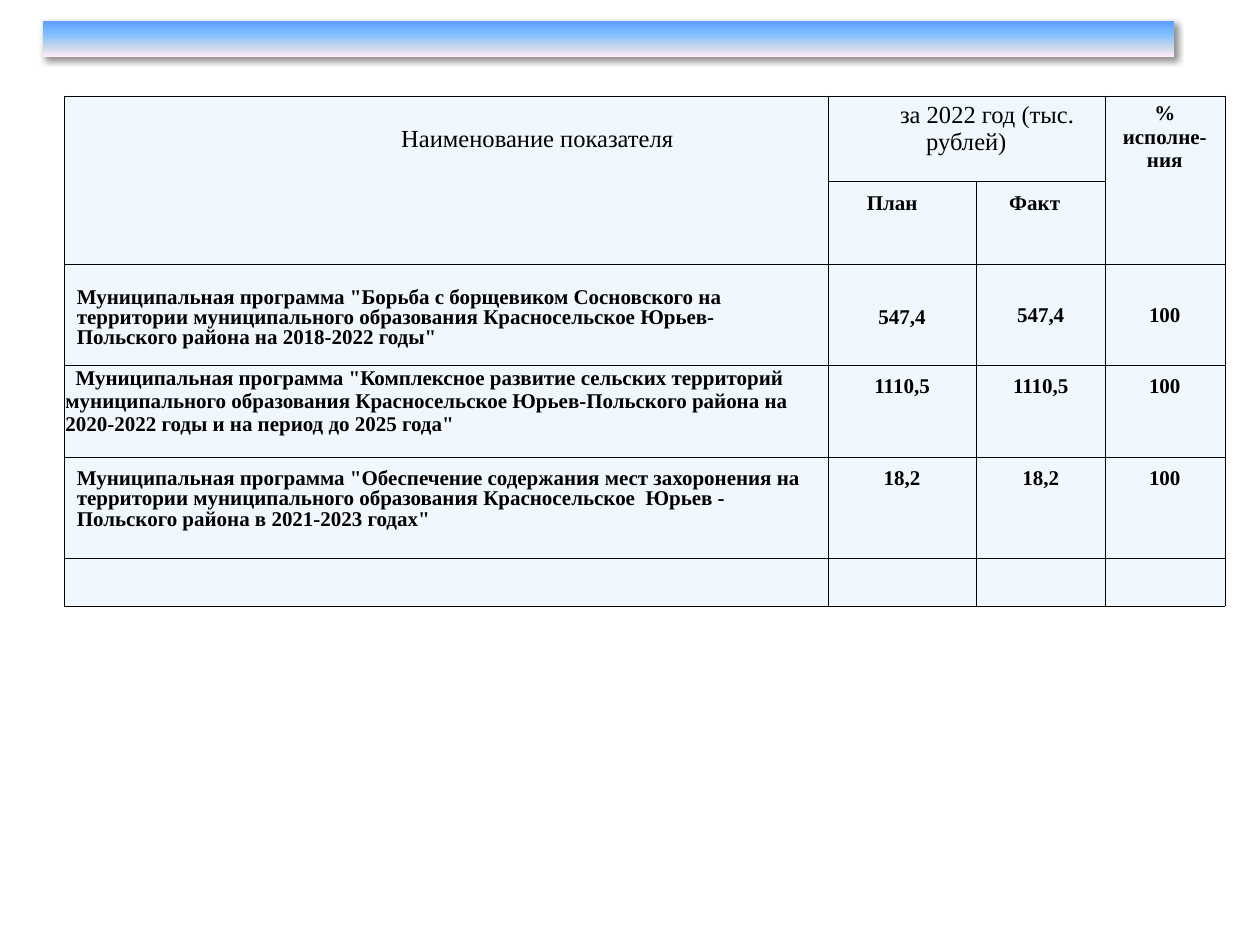
from lxml.etree import SubElement as Sub
from pptx import Presentation
from pptx.dml.color import RGBColor as Rgb
from pptx.enum.shapes import MSO_SHAPE as Shape
from pptx.enum.text import MSO_ANCHOR as Anchor, PP_ALIGN as Align
from pptx.oxml import parse_xml
from pptx.oxml.ns import qn
from pptx.util import Inches as In, Pt

FONT, INK, PALE = "Times New Roman", "000000", "F0F8FE"
COLS = [6.06, 1.18, 1.02, 0.95]
ROWS = [0.68, 0.66, 0.8, 0.73, 0.8, 0.38]
SPANS = [(0, 0, 1, 0), (0, 1, 0, 2), (0, 3, 1, 3)]
STOPS = [(0, "5E9EFF"), (40, "85C2FF"), (70, "C4D6EB"), (100, "FFEBFA")]
WIDE, TIGHT = (0.1, 0.1, 0.1, 0.05), (0.01, 0.01, 0.01, 0)
HEAD = (0.1, 0.05, 0.1, 0.05)

BASE = dict(pad=WIDE, size=12, bold=True, align=Align.CENTER, anchor=Anchor.TOP,
            gap=0.86, indent=0)
LEFT = dict(align=Align.LEFT)
MID = dict(anchor=Anchor.MIDDLE)
SNUG = dict(MID, pad=TIGHT, gap=1)
CELLS = [
    [("Наименование показателя", dict(size=14, bold=False, pad=(1.55, 0.26, 0.1, 0.05))),
     ("за 2022 год (тыс. рублей)", dict(size=14, bold=False, pad=HEAD, gap=1, indent=0.33)),
     None,
     ("% исполне-ния", dict(pad=HEAD, gap=1))],
    [None, ("План", dict(LEFT, indent=0.21)), ("Факт", dict(LEFT, indent=0.16)), None],
    [('Муниципальная программа "Борьба с борщевиком Сосновского на территории '
      'муниципального образования Красносельское Юрьев-Польского района на 2018-2022 годы"',
      dict(LEFT, **MID)),
     ("547,4", MID), ("547,4", SNUG), ("100", SNUG)],
    [('Муниципальная программа "Комплексное развитие сельских территорий '
      'муниципального образования Красносельское Юрьев-Польского района на '
      '2020-2022 годы и на период до 2025 года"',
      dict(LEFT, pad=TIGHT, gap=1, indent=0.08)),
     ("1110,5", {}), ("1110,5", {}), ("100", {})],
    [('Муниципальная программа "Обеспечение содержания мест захоронения на территории '
      'муниципального образования Красносельское  Юрьев - Польского района в 2021-2023 годах"',
      LEFT),
     ("18,2", {}), ("18,2", {}), ("100", {})],
    [("", dict(pad=TIGHT))] * 4,
]


def tint(code):
    return Rgb.from_string(code)


def edge(cell):
    props = cell._tc.get_or_add_tcPr()
    for n, side in enumerate(("lnL", "lnR", "lnT", "lnB")):
        line = props.makeelement(qn("a:" + side), {"w": str(Pt(0.11))})
        fill = Sub(line, qn("a:solidFill"))
        Sub(fill, qn("a:srgbClr"), val=INK)
        props.insert(n, line)


def write(cell, text, style):
    look = {**BASE, **style}
    (cell.margin_left, cell.margin_top,
     cell.margin_right, cell.margin_bottom) = map(In, look["pad"])
    cell.vertical_anchor = look["anchor"]
    cell.text_frame.text = text
    para = cell.text_frame.paragraphs[0]
    para.alignment = look["align"]
    para.line_spacing = look["gap"]
    if look["indent"]:
        para._p.get_or_add_pPr().set("indent", str(In(look["indent"])))
    for run in para.runs:
        font = run.font
        font.name, font.size, font.bold = FONT, Pt(look["size"]), look["bold"]
        font.color.rgb = tint(INK)


def banner(slide):
    bar = slide.shapes.add_shape(Shape.RECTANGLE, In(0.34), In(0.17), In(8.98), In(0.28))
    bar.line.fill.background()
    bar.shadow.inherit = False
    bar.fill.gradient()
    props = bar._element.spPr
    grad = props.find(qn("a:gradFill"))
    stops = grad.find(qn("a:gsLst"))
    for old in list(stops):
        stops.remove(old)
    for pos, code in STOPS:
        stop = Sub(stops, qn("a:gs"), pos=str(pos * 1000))
        Sub(stop, qn("a:srgbClr"), val=code)
    grad.find(qn("a:lin")).set("ang", "5400000")
    props.find(qn("a:effectLst")).append(parse_xml(
        '<a:outerShdw xmlns:a="http://schemas.openxmlformats.org/drawingml/2006/main" '
        f'blurRad="{Pt(4)}" dist="{Pt(2)}" dir="2700000" rotWithShape="0">'
        f'<a:srgbClr val="{INK}"><a:alpha val="43000"/></a:srgbClr></a:outerShdw>'))


def grid(slide):
    table = slide.shapes.add_table(len(ROWS), len(COLS), In(0.51), In(0.76),
                                   In(sum(COLS)), In(sum(ROWS))).table
    table.first_row = table.horz_banding = False
    for col, width in zip(table.columns, COLS):
        col.width = In(width)
    for row, height in zip(table.rows, ROWS):
        row.height = In(height)
    for top, left, low, right in SPANS:
        table.cell(top, left).merge(table.cell(low, right))
    for r, line in enumerate(CELLS):
        for c, item in enumerate(line):
            cell = table.cell(r, c)
            cell.fill.solid()
            cell.fill.fore_color.rgb = tint(PALE)
            edge(cell)
            if item:
                write(cell, *item)


def main():
    deck = Presentation()
    deck.slide_width, deck.slide_height = In(10), In(7.5)
    slide = deck.slides.add_slide(deck.slide_layouts[6])
    banner(slide)
    grid(slide)
    deck.save("out.pptx")


if __name__ == "__main__":
    main()
